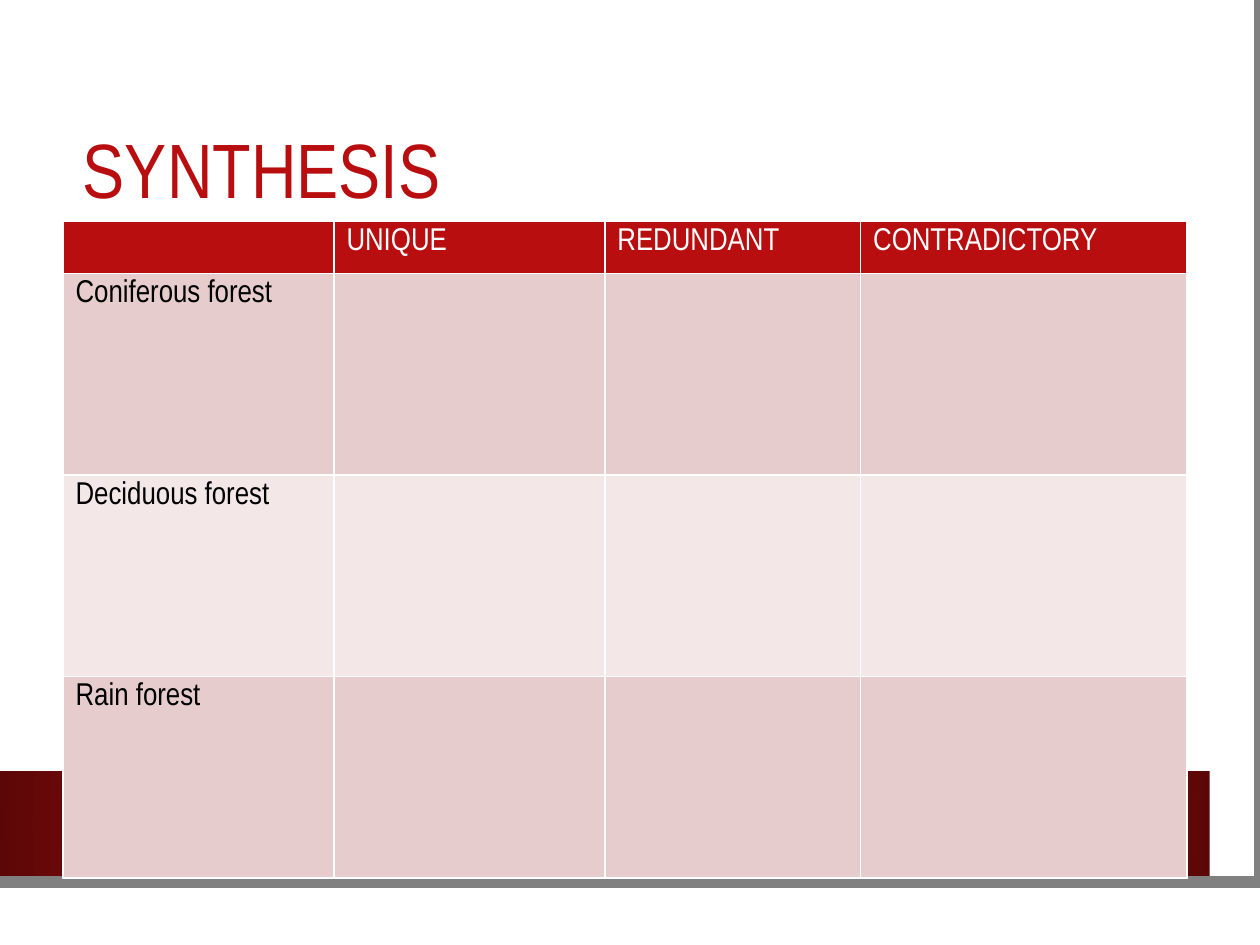
from dataclasses import dataclass

from lxml import etree
from pptx import Presentation
from pptx.dml.color import RGBColor
from pptx.enum.shapes import MSO_SHAPE
from pptx.enum.text import MSO_ANCHOR
from pptx.oxml.ns import qn
from pptx.util import Inches, Pt

RECTANGLE = MSO_SHAPE.RECTANGLE
MIDDLE = MSO_ANCHOR.MIDDLE


@dataclass(frozen=True)
class Theme:
    font: str = "Arial Narrow"
    title_size: float = 44
    cell_size: float = 18
    frame_width: float = 6.5
    border_width: float = 1
    red: str = "B80E0F"
    dark_red: str = "5C0707"
    grey: str = "808080"
    white: str = "FFFFFF"
    black: str = "000000"
    row_fills: tuple[str, str] = ("E6CCCC", "F3E7E7")


@dataclass(frozen=True)
class Box:
    left: float
    top: float
    width: float
    height: float

    def lengths(self) -> tuple:
        return tuple(map(Inches, (self.left, self.top, self.width, self.height)))


THEME = Theme()
COLUMN_WIDTHS = (2.15, 2.15, 2.03, 2.59)
ROW_HEIGHTS = (0.41, 1.6, 1.6, 1.6)
HEADINGS = ("", "UNIQUE", "REDUNDANT", "CONTRADICTORY")
FORESTS = ("Coniferous forest", "Deciduous forest", "Rain forest")


def rgb(value: str) -> RGBColor:
    return RGBColor.from_string(value)


def style_text(para, size: float, color: str) -> None:
    para.font.size = Pt(size)
    for span in para.runs:
        span.font.name = THEME.font
        span.font.size = Pt(size)
        span.font.color.rgb = rgb(color)


def add_rectangle(page, box: Box):
    shape = page.shapes.add_shape(RECTANGLE, *box.lengths())
    shape.shadow.inherit = False
    shape.line.fill.background()
    return shape


def add_band(page, box: Box) -> None:
    band = add_rectangle(page, box)
    band.fill.gradient()
    stops = ((0.34, THEME.red), (1, THEME.dark_red))
    for stop, (position, color) in zip(band.fill.gradient_stops, stops):
        stop.position = position
        stop.color.rgb = rgb(color)
    # Make the gradient circular, from the centre outwards
    gradient = band.fill._xPr.find(qn("a:gradFill"))
    linear = gradient.find(qn("a:lin"))
    circle = etree.Element(qn("a:path"), path="circle")
    etree.SubElement(circle, qn("a:fillToRect"), l="50000", t="50000", r="50000", b="50000")
    gradient.replace(linear, circle)


def add_frame(page) -> None:
    builder = page.shapes.build_freeform(9.62, 0, scale=Inches(1))
    builder.add_line_segments([(9.64, 7.02), (-0.02, 7.01)], close=False)
    frame = builder.convert_to_shape()
    frame.shadow.inherit = False
    frame.fill.background()
    frame.line.color.rgb = rgb(THEME.grey)
    frame.line.width = Pt(THEME.frame_width)
    etree.SubElement(frame.line._ln, qn("a:miter"), lim="800000")


def add_borders(cell) -> None:
    properties = cell._tc.get_or_add_tcPr()
    for index, side in enumerate(("lnL", "lnR", "lnT", "lnB")):
        border = etree.Element(qn(f"a:{side}"), w=str(Pt(THEME.border_width)))
        fill = etree.SubElement(border, qn("a:solidFill"))
        etree.SubElement(fill, qn("a:srgbClr"), val=THEME.white)
        properties.insert(index, border)


def add_forest_table(page, box: Box) -> None:
    rows = [HEADINGS] + [(forest, "", "", "") for forest in FORESTS]
    table = page.shapes.add_table(len(rows), len(HEADINGS), *box.lengths()).table
    for column, width in zip(table.columns, COLUMN_WIDTHS):
        column.width = Inches(width)
    for row, height in zip(table.rows, ROW_HEIGHTS):
        row.height = Inches(height)
    for row_index, texts in enumerate(rows):
        is_heading = row_index == 0
        fill = THEME.red if is_heading else THEME.row_fills[(row_index - 1) % 2]
        color = THEME.white if is_heading else THEME.black
        for column_index, text in enumerate(texts):
            cell = table.cell(row_index, column_index)
            cell.fill.solid()
            cell.fill.fore_color.rgb = rgb(fill)
            add_borders(cell)
            para = cell.text_frame.paragraphs[0]
            if text:
                para.text = text
            style_text(para, THEME.cell_size, color)
            para.font.bold = False


def add_title(page, box: Box, text: str) -> None:
    frame = page.shapes.add_textbox(*box.lengths()).text_frame
    frame.word_wrap = True
    frame.vertical_anchor = MIDDLE
    frame.text = text
    para = frame.paragraphs[0]
    para.line_spacing = 0.9
    style_text(para, THEME.title_size, THEME.red)


def main() -> None:
    deck = Presentation()
    deck.slide_width, deck.slide_height = Inches(10), Inches(7.5)
    page = deck.slides.add_slide(deck.slide_layouts[6])

    # Backdrop: white sheet, red band and grey frame
    sheet = add_rectangle(page, Box(0, 0, 9.83, 7.27))
    sheet.fill.solid()
    sheet.fill.fore_color.rgb = rgb(THEME.white)
    add_band(page, Box(0, 6.12, 9.6, 0.85))
    add_frame(page)

    # Content
    add_forest_table(page, Box(0.5, 1.76, sum(COLUMN_WIDTHS), sum(ROW_HEIGHTS)))
    add_title(page, Box(0.56, 0.75, 8.53, 1.26), "SYNTHESIS")

    deck.save("out.pptx")


if __name__ == "__main__":
    main()
